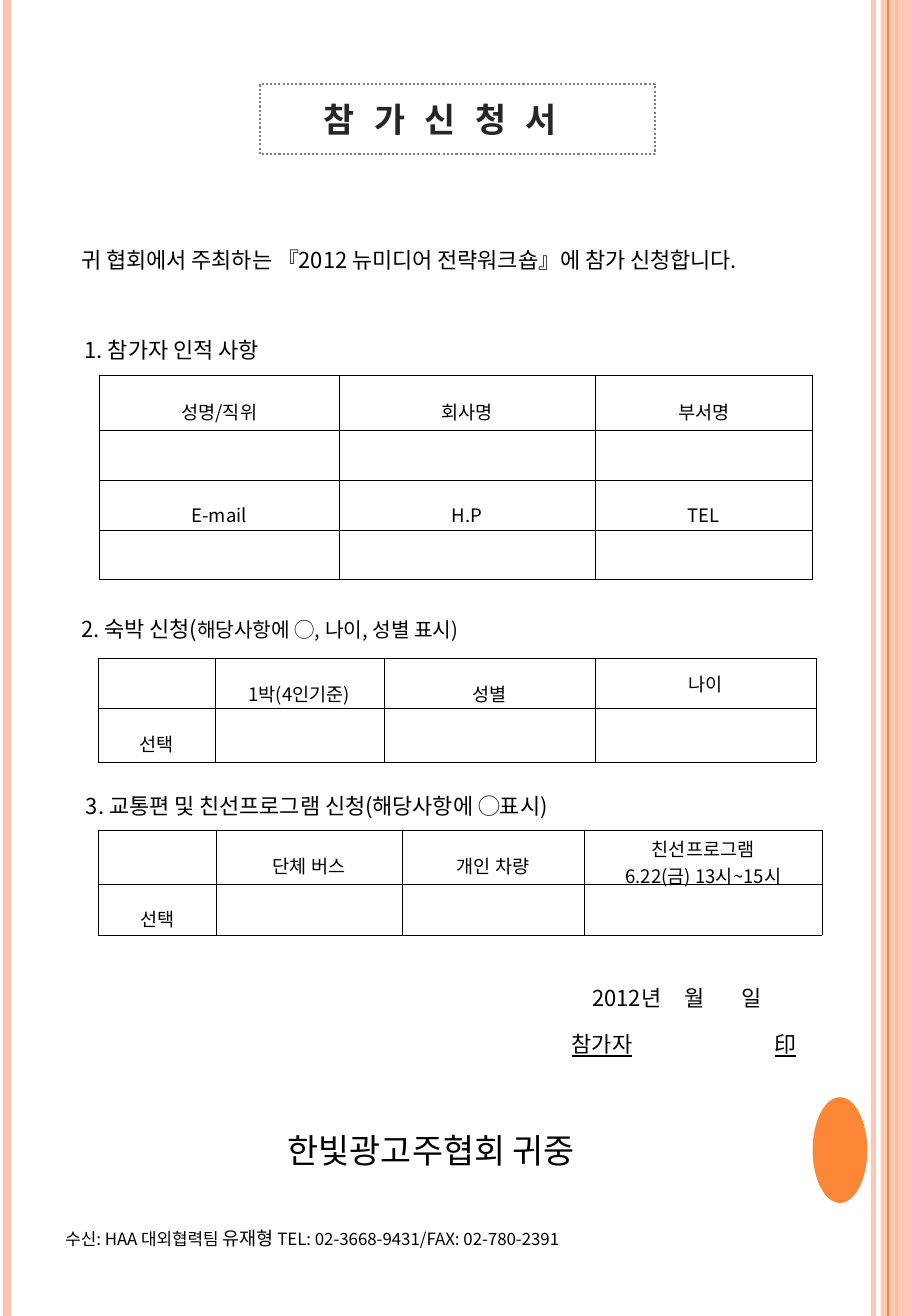
from lxml import etree
from pptx import Presentation
from pptx.dml.color import RGBColor
from pptx.enum import dml, shapes, text
from pptx.oxml import ns
from pptx.util import Inches, Pt

THEME = {
    "font": "Noto Sans CJK KR",
    "ink": RGBColor.from_string("000000"),
    "title_ink": RGBColor.from_string("262626"),
    "frame": RGBColor.from_string("808080"),
    "peach": RGBColor.from_string("FEC3AE"),
    "orange": RGBColor.from_string("FE8637"),
    "display": Pt(20), "body": Pt(13), "hint": Pt(12), "cell": Pt(11), "footer": Pt(10),
}


def add_run(paragraph, words, size, **extra):
    run = paragraph.add_run()
    run.text = words
    for key, value in {"name": THEME["font"], "size": THEME[size], **extra}.items():
        setattr(run.font, key, value)
    run.font.color.rgb = THEME["title_ink" if extra.get("bold") else "ink"]
    etree.SubElement(run.font._element, ns.qn("a:ea"), typeface=THEME["font"])
    return run


def set_opacity(element, percent):
    for color in element.iter(ns.qn("a:srgbClr")):
        etree.SubElement(color, ns.qn("a:alpha"), val=str(percent * 1000))


deck = Presentation()
deck.slide_width, deck.slide_height = Inches(7.5), Inches(10.83)
slide = deck.slides.add_slide(deck.slide_layouts[5])

# Side stripes: x, colour, width, opacity
stripes = [(7.19, "peach", 3, 93), (0.06, "peach", 4.5, 100),
           (7.38, "orange", 1.5, 100), (7.31, "orange", 0.75, 100)]
for x, color, width, opacity in stripes:
    if x == 7.31:
        band = slide.shapes.add_shape(shapes.MSO_SHAPE.RECTANGLE, Inches(7.25), 0,
                                      Inches(0.25), deck.slide_height)
        band.fill.solid()
        band.fill.fore_color.rgb = THEME["peach"]
        set_opacity(band._element.spPr, 87)
        band.line.fill.background()
        band.shadow.inherit = False
    stripe = slide.shapes.add_connector(shapes.MSO_CONNECTOR.STRAIGHT, Inches(x), 0,
                                        Inches(x), deck.slide_height)
    stripe.line.color.rgb = THEME[color]
    stripe.line.width = Pt(width)
    set_opacity(stripe._element.spPr, opacity)
    etree.SubElement(stripe._element.spPr, ns.qn("a:effectLst"))

oval = slide.shapes.add_shape(shapes.MSO_SHAPE.OVAL, Inches(6.69), Inches(9.03),
                              Inches(0.45), Inches(0.87))
oval.fill.solid()
oval.fill.fore_color.rgb = THEME["orange"]
oval.line.fill.background()
oval.shadow.inherit = False

# Title in a dotted frame
title = slide.shapes.title
title.left, title.top, title.width, title.height = map(Inches, (2.14, 0.69, 3.25, 0.58))
title.line.color.rgb = THEME["frame"]
title.line.width = Pt(1.25)
title.line.dash_style = dml.MSO_LINE.ROUND_DOT
title_format = {"auto_size": text.MSO_AUTO_SIZE.NONE, "margin_right": Inches(0.38),
                "vertical_anchor": text.MSO_ANCHOR.MIDDLE}
for key, value in title_format.items():
    setattr(title.text_frame, key, value)
heading = title.text_frame.paragraphs[0]
heading.alignment = text.PP_ALIGN.CENTER
add_run(heading, "참 가 신 청 서", "display", bold=True).font._element.set("spc", "350")

# Labels: left, top, width, height, paragraphs of runs
labels = [
    (0.57, 1.98, 6.68, 0.32,
     [[("귀 협회에서 주최하는 『2012 뉴미디어 전략워크숍』에 참가 신청합니다.", "body")]]),
    (0.6, 2.72, 2.51, 0.32, [[("1. 참가자 인적 사항", "body")]]),
    (0.57, 5.02, 5.51, 0.32,
     [[("2. 숙박 신청(", "body"), ("해당사항에 ◯, 나이, 성별 표시)", "hint")]]),
    (0.61, 6.47, 5.36, 0.32, [[("3. 교통편 및 친선프로그램 신청(해당사항에 ◯표시)", "body")]]),
    (4.61, 8.05, 2.37, 0.76,
     [[("\t2012년\t월\t일", "body")], [("참가자\t印", "body")]]),
    (2.27, 9.25, 2.82, 0.44, [[("한빛광고주협회 귀중", "display")]]),
    (0.44, 10.05, 6.72, 0.29,
     [[("수신: HAA 대외협력팀 ", "footer"), ("유재형", "cell"),
       (" TEL: 02-3668-9431/FAX: 02-780-2391", "footer")]]),
]
signature_tabs = {"\t2012년\t월\t일": (0.17, 0.93, 1.4), "참가자\t印": (1.67,)}
for *place, paragraphs in labels:
    frame = slide.shapes.add_textbox(*map(Inches, place)).text_frame
    frame.word_wrap = True
    for index, runs in enumerate(paragraphs):
        paragraph = frame.add_paragraph() if index else frame.paragraphs[0]
        if index:
            paragraph.space_before = Pt(12)
        if runs[0][0] in signature_tabs:
            stops = etree.SubElement(paragraph._p.get_or_add_pPr(), ns.qn("a:tabLst"))
            for stop in signature_tabs[runs[0][0]]:
                etree.SubElement(stops, ns.qn("a:tab"), pos=str(Inches(stop)), algn="l")
        for words, size in runs:
            add_run(paragraph, words, size, **({"underline": True} if index else {}))

# Form tables: left, top, column widths, row heights, rows
forms = [
    (0.82, 3.09, (1.97, 2.11, 1.79), (0.45, 0.41, 0.41, 0.41),
     [("성명/직위", "회사명", "부서명"), ("",) * 3, ("E-mail", "H.P", "TEL"), ("",) * 3]),
    (0.81, 5.42, (0.96, 1.39, 1.74, 1.82), (0.41, 0.44),
     [("", "1박(4인기준)", "성별", "나이"), ("선택", "", "", "")]),
    (0.81, 6.83, (0.97, 1.53, 1.5, 1.96), (0.44, 0.42),
     [("", "단체 버스", "개인 차량", "친선프로그램\n6.22(금) 13시~15시"),
      ("선택", "", "", "")]),
]
single_spaced = ("나이", "친선프로그램\n6.22(금) 13시~15시")
cell_format = {"vertical_anchor": text.MSO_ANCHOR.MIDDLE,
               "margin_left": Inches(0.08), "margin_right": Inches(0.08),
               "margin_top": Inches(0.04), "margin_bottom": Inches(0.04)}
for left, top, widths, heights, rows in forms:
    form = slide.shapes.add_table(len(rows), len(widths), Inches(left), Inches(top),
                                  Inches(sum(widths)), Inches(sum(heights))).table
    form.first_row = form.horz_banding = False
    for column, width in zip(form.columns, widths):
        column.width = Inches(width)
    for row, height, entries in zip(form.rows, heights, rows):
        row.height = Inches(height)
        for cell, entry in zip(row.cells, entries):
            for key, value in cell_format.items():
                setattr(cell, key, value)
            properties = cell._tc.get_or_add_tcPr()
            for side in ("lnL", "lnR", "lnT", "lnB"):
                border = etree.SubElement(properties, ns.qn(f"a:{side}"), w=str(Pt(0.25)))
                paint = etree.SubElement(border, ns.qn("a:solidFill"))
                etree.SubElement(paint, ns.qn("a:srgbClr"), val=str(THEME["ink"]))
            cell.fill.background()
            for index, words in enumerate(entry.split("\n")):
                frame = cell.text_frame
                paragraph = frame.add_paragraph() if index else frame.paragraphs[0]
                paragraph.alignment = text.PP_ALIGN.CENTER
                if words:
                    paragraph.line_spacing = 1.0 if entry in single_spaced else 1.6
                    add_run(paragraph, words, "cell")
                else:
                    etree.SubElement(paragraph._p, ns.qn("a:endParaRPr"),
                                     sz=str(int(THEME["cell"].pt * 100)))

deck.save("out.pptx")
